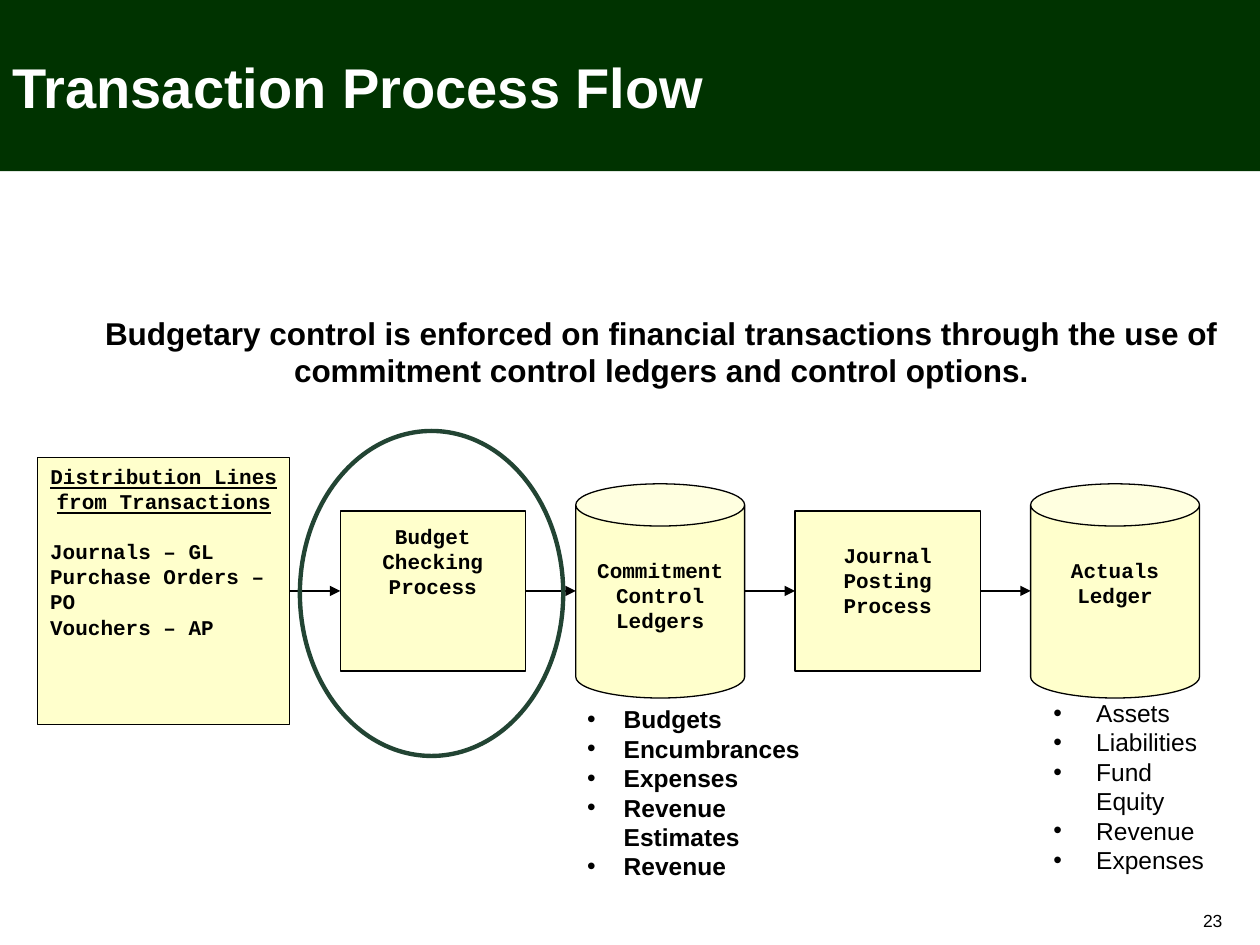
from dataclasses import dataclass

import pptx
import pptx.dml.color
import pptx.enum.shapes
import pptx.enum.text
import pptx.oxml
import pptx.oxml.ns
import pptx.util

SHAPE = pptx.enum.shapes.MSO_SHAPE
ALIGN = pptx.enum.text.PP_ALIGN
ANCHOR = pptx.enum.text.MSO_ANCHOR

# The slide is a grid of 100 columns and 75 rows of square cells.
COLUMNS, ROWS = 100, 75
FLOW_LEFT, FLOW_GAP, FLOW_AXIS = 3, 4, 46.9
BLACK, WHITE, GREEN, CREAM = "000000", "FFFFFF", "003300", "FFFFCC"


@dataclass
class Step:
    kind: int
    columns: float
    rows: float
    lines: list[str]
    top_inset: float = 2.5


@dataclass
class LedgerList:
    left: float
    top: float
    columns: float
    rows: float
    indent: float
    bold: bool
    items: list[str]


STEPS = [
    Step(SHAPE.RECTANGLE, 20, 21.2,
         ["Distribution Lines from Transactions", "Journals – GL",
          "Purchase Orders –PO", "Vouchers – AP"], 0.5),
    Step(SHAPE.RECTANGLE, 14.7, 12.7, ["Budget Checking", "Process"], 1),
    Step(SHAPE.CAN, 13.4, 17, ["Commitment Control", "Ledgers"]),
    Step(SHAPE.RECTANGLE, 14.7, 12.7, ["Journal Posting Process"]),
    Step(SHAPE.CAN, 13.4, 17, ["Actuals Ledger"]),
]

LEDGER_LISTS = [
    LedgerList(45.6, 55.4, 21.1, 16.1, 2.9, True,
               ["Budgets", "Encumbrances", "Expenses", "Revenue Estimates", "Revenue"]),
    LedgerList(82.6, 54.9, 15.3, 18.5, 3.4, False,
               ["Assets", "Liabilities", "Fund Equity", "Revenue", "Expenses"]),
]


def cells(count: float) -> int:
    return pptx.util.Inches(count / 10)


def color(value: str) -> pptx.dml.color.RGBColor:
    return pptx.dml.color.RGBColor.from_string(value)


def place(shape, left: float, top: float, columns: float, rows: float) -> None:
    shape.left, shape.top = cells(left), cells(top)
    shape.width, shape.height = cells(columns), cells(rows)


def write(shape, lines: list[str], size: float, font: str = "Arial", bold: bool = False,
          ink: str = BLACK, align=ALIGN.LEFT, anchor=ANCHOR.TOP) -> list:
    """Fill the shape with formatted paragraphs and return them."""
    frame = shape.text_frame
    frame.text = "\n".join(lines)
    frame.word_wrap = True
    frame.auto_size = pptx.enum.text.MSO_AUTO_SIZE.NONE
    frame.vertical_anchor = anchor
    for paragraph in frame.paragraphs:
        paragraph.alignment = align
        paragraph.space_before = pptx.util.Pt(0)
        for run in paragraph.runs:
            run.font.name, run.font.size = font, pptx.util.Pt(size)
            run.font.bold = bold
            run.font.color.rgb = color(ink)
    return list(frame.paragraphs)


def draw_outline(slide, kind, left: float, top: float, columns: float, rows: float,
                 fill: str | None, line: str | None, points: float = 0.75):
    shape = slide.shapes.add_shape(kind, cells(left), cells(top), cells(columns), cells(rows))
    shape.shadow.inherit = False
    if fill:
        shape.fill.solid()
        shape.fill.fore_color.rgb = color(fill)
    else:
        shape.fill.background()
    if line:
        shape.line.color.rgb = color(line)
        shape.line.width = pptx.util.Pt(points)
    else:
        shape.line.fill.background()
    return shape


def add_text(slide, left: float, top: float, columns: float, rows: float):
    return slide.shapes.add_textbox(cells(left), cells(top), cells(columns), cells(rows))


def draw_step(slide, step: Step, left: float):
    shape = draw_outline(slide, step.kind, left, FLOW_AXIS - step.rows / 2,
                         step.columns, step.rows, CREAM, BLACK)
    write(shape, step.lines, 12, "Courier New", True, align=ALIGN.CENTER)
    shape.text_frame.margin_top = cells(step.top_inset)
    return shape


def draw_arrow(slide, source, target) -> None:
    """Join two neighbouring steps along the flow axis."""
    arrow = slide.shapes.add_connector(
        pptx.enum.shapes.MSO_CONNECTOR.STRAIGHT,
        source.left + source.width, cells(FLOW_AXIS), target.left, cells(FLOW_AXIS))
    if source.auto_shape_type == SHAPE.RECTANGLE:
        arrow.begin_connect(source, 3)
    if target.auto_shape_type == SHAPE.RECTANGLE:
        arrow.end_connect(target, 1)
    arrow.line.color.rgb = color(BLACK)
    arrow.line.width = pptx.util.Pt(0.75)
    head = pptx.oxml.parse_xml(f'<a:tailEnd {pptx.oxml.ns.nsdecls("a")} type="triangle"/>')
    arrow.line._get_or_add_ln().append(head)
    properties = arrow.element.spPr
    properties.append(pptx.oxml.parse_xml(f'<a:effectLst {pptx.oxml.ns.nsdecls("a")}/>'))


def fill_ledger_list(placeholder, ledger: LedgerList) -> None:
    place(placeholder, ledger.left, ledger.top, ledger.columns, ledger.rows)
    for paragraph in write(placeholder, ledger.items, 14, bold=ledger.bold):
        properties = paragraph._p.get_or_add_pPr()
        properties.set("marL", str(cells(ledger.indent)))
        properties.set("indent", str(-cells(ledger.indent)))
        properties.append(pptx.oxml.parse_xml(
            f'<a:buChar {pptx.oxml.ns.nsdecls("a")} char="•"/>'))


def draw_flow(slide) -> None:
    left, shapes = FLOW_LEFT, []
    for step in STEPS:
        shapes.append(draw_step(slide, step, left))
        left += step.columns + FLOW_GAP
    for source, target in zip(shapes, shapes[1:]):
        draw_arrow(slide, source, target)

    heading, *documents = shapes[0].text_frame.paragraphs
    heading.runs[0].font.underline = True
    for document in documents:
        document.alignment = ALIGN.LEFT
    documents[0].space_before = pptx.util.Pt(14)


def main() -> None:
    deck = pptx.Presentation()
    deck.slide_width, deck.slide_height = cells(COLUMNS), cells(ROWS)
    slide = deck.slides.add_slide(deck.slide_layouts[3])
    title, *list_holders = slide.placeholders

    band = draw_outline(slide, SHAPE.RECTANGLE, 0, 0, COLUMNS, 13.6, GREEN, None)
    title.element.addprevious(band.element)
    place(title, 0, 4.2, 77.5, 5.8)
    write(title, ["Transaction Process Flow"], 32, bold=True, ink=WHITE, anchor=ANCHOR.BOTTOM)

    statement = add_text(slide, 0, 24.4, COLUMNS, 7)
    write(statement, ["Budgetary control is enforced on financial transactions through "
                      "the use of commitment control ledgers and control options."],
          18, bold=True, align=ALIGN.CENTER)
    statement.text_frame.margin_left = cells(6)

    draw_flow(slide)
    for holder, ledger in zip(list_holders, LEDGER_LISTS):
        fill_ledger_list(holder, ledger)
    draw_outline(slide, SHAPE.OVAL, 23.8, 34.2, 20.9, 25.8, None, "224433", 2.5)

    page_number = add_text(slide, 79.5, 71.4, 18.5, 3)
    write(page_number, ["23"], 10, align=ALIGN.RIGHT, anchor=ANCHOR.BOTTOM)[0].line_spacing = 0.8

    deck.save("out.pptx")


if __name__ == "__main__":
    main()
